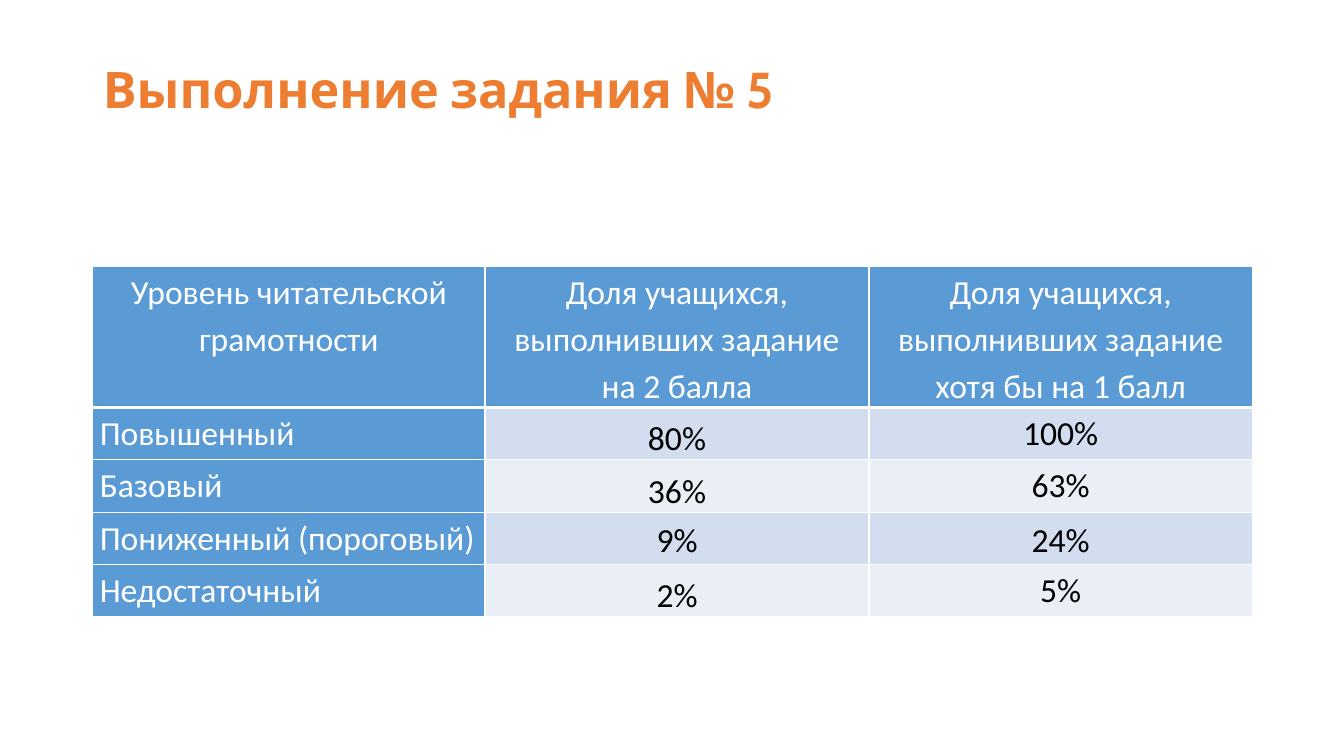
from dataclasses import dataclass

from lxml import etree
from pptx import Presentation
from pptx.dml.color import RGBColor
from pptx.enum import text
from pptx.oxml import ns
from pptx.util import Inches, Pt


@dataclass(frozen=True)
class Theme:
    title_font: str = "Cabin"
    body_font: str = "Calibri"
    title_size: int = 36
    body_size: int = 24
    orange: str = "ED7D31"
    blue: str = "5B9BD5"
    bands: tuple = ("D2DEEF", "EAEFF7")
    white: str = "FFFFFF"
    black: str = "000000"


theme = Theme()


def style_text(frame, font, size, color, bold, align, spacing):
    for para in frame.paragraphs:
        para.alignment = align
        para.line_spacing = spacing
        for span in para.runs:
            span.font.name = font
            span.font.size = Pt(size)
            span.font.bold = bold
            span.font.color.rgb = RGBColor.from_string(color)


def add_borders(cell, bottom_width):
    """Draw white lines around a cell; call before the cell gets its fill."""
    properties = cell._tc.get_or_add_tcPr()
    for side, width in (("L", 1), ("R", 1), ("T", 1), ("B", bottom_width)):
        line = etree.SubElement(properties, ns.qn(f"a:ln{side}"), w=str(Pt(width)))
        fill = etree.SubElement(line, ns.qn("a:solidFill"))
        etree.SubElement(fill, ns.qn("a:srgbClr"), val=theme.white)


deck = Presentation()
deck.slide_width = Inches(13.33)
deck.slide_height = Inches(7.5)
page = deck.slides.add_slide(deck.slide_layouts[5])

title = page.shapes.title
title.left, title.top = Inches(0.92), Inches(0.4)
title.width, title.height = Inches(11.5), Inches(1.02)
title.text_frame.text = "Выполнение задания № 5"
title.text_frame.vertical_anchor = text.MSO_ANCHOR.MIDDLE
style_text(title.text_frame, theme.title_font, theme.title_size, theme.orange,
           True, text.PP_ALIGN.LEFT, 0.9)

results = [
    ("Уровень читательской грамотности",
     "Доля учащихся, выполнивших задание\nна 2 балла",
     "Доля учащихся, выполнивших задание\nхотя бы на 1 балл"),
    ("Повышенный", "80%", "100%"),
    ("Базовый", "36%", "63%"),
    ("Пониженный (пороговый)", "9%", "24%"),
    ("Недостаточный", "2%", "5%"),
]
column_widths = (3.89, 3.81, 3.8)
row_heights = (1.08, 0.52, 0.52, 0.52, 0.52)
top, middle, bottom = (text.MSO_ANCHOR.TOP, text.MSO_ANCHOR.MIDDLE,
                       text.MSO_ANCHOR.BOTTOM)
row_anchors = [
    (top, top, top),
    (top, bottom, top),
    (top, bottom, top),
    (top, middle, middle),
    (top, bottom, top),
]

table = page.shapes.add_table(
    len(results), len(column_widths), Inches(0.92), Inches(2.64),
    Inches(sum(column_widths)), Inches(sum(row_heights))).table
table.first_col = True
for column, width in zip(table.columns, column_widths):
    column.width = Inches(width)
for row, height in zip(table.rows, row_heights):
    row.height = Inches(height)

for r, values in enumerate(results):
    for c, value in enumerate(values):
        cell = table.cell(r, c)
        is_heading = r == 0 or c == 0
        cell.text_frame.text = value
        cell.vertical_anchor = row_anchors[r][c]
        cell.margin_left = cell.margin_right = Inches(0.07)
        cell.margin_top = cell.margin_bottom = 0
        add_borders(cell, 3 if r == 0 else 1)
        cell.fill.solid()
        cell.fill.fore_color.rgb = RGBColor.from_string(
            theme.blue if is_heading else theme.bands[(r - 1) % 2])
        is_level = c == 0 and r > 0
        style_text(cell.text_frame, theme.body_font, theme.body_size,
                   theme.white if is_heading else theme.black, False,
                   text.PP_ALIGN.JUSTIFY if is_level else text.PP_ALIGN.CENTER,
                   1.15)

deck.save("out.pptx")
